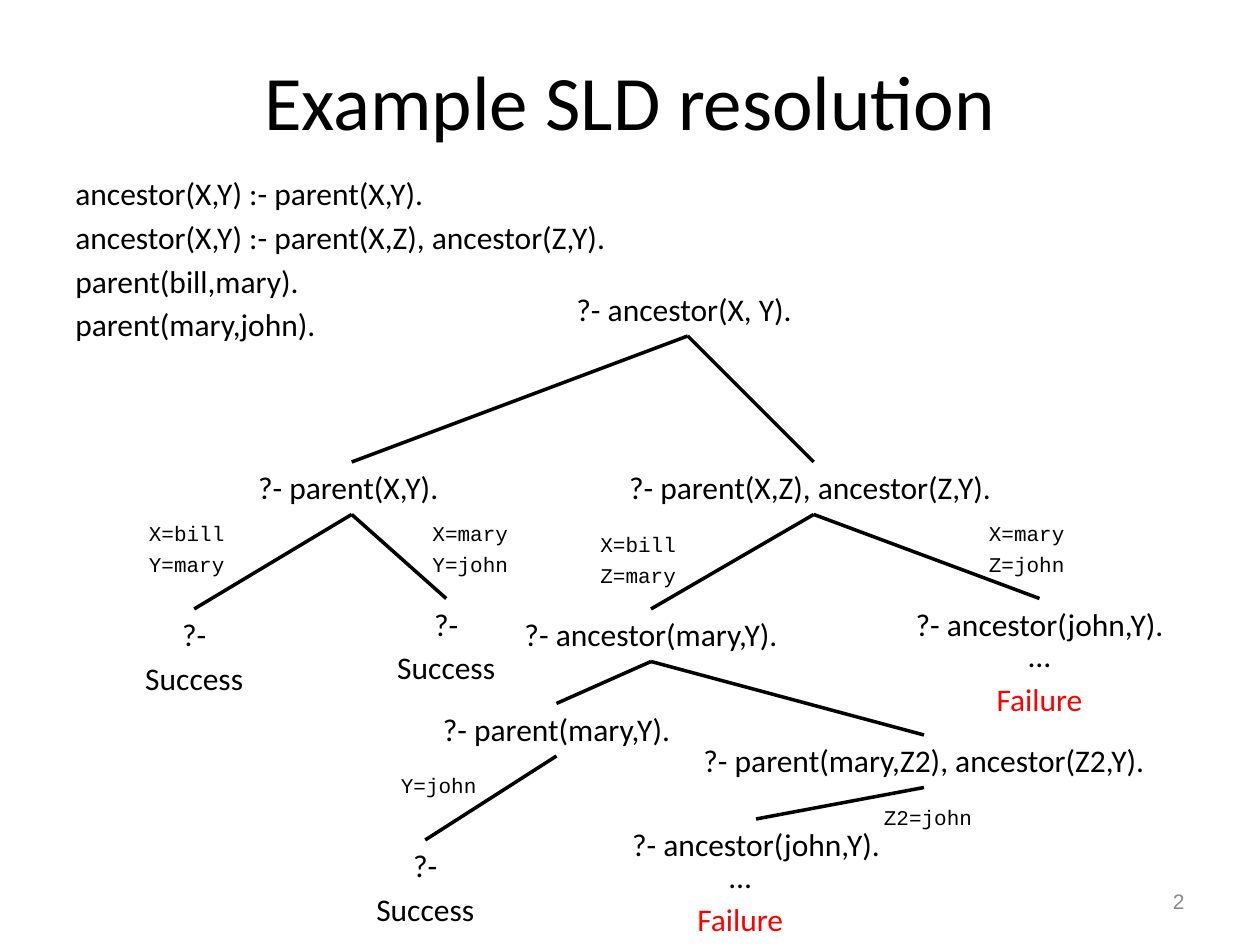
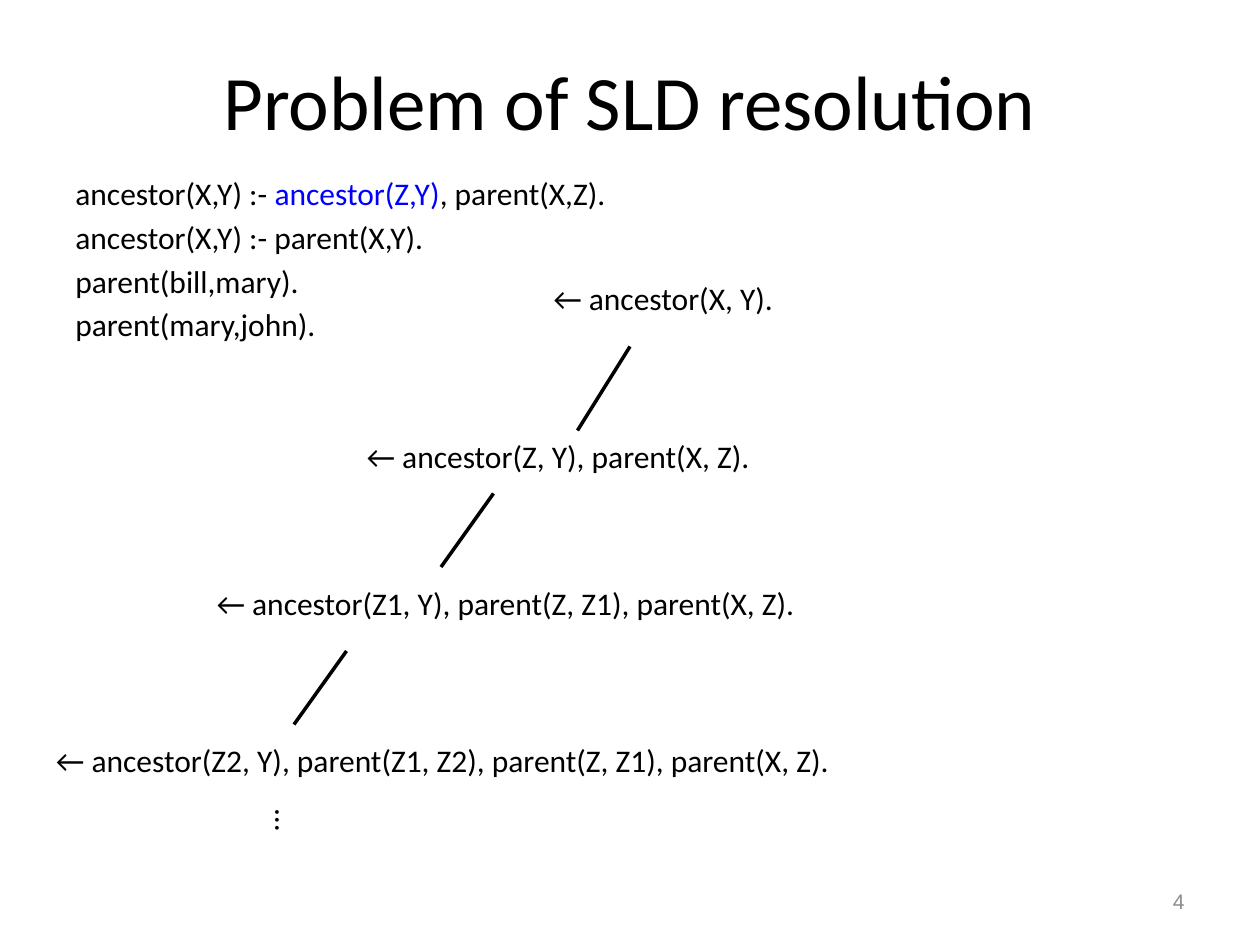
from pptx import Presentation
from pptx.dml.color import RGBColor
from pptx.enum.shapes import MSO_CONNECTOR, MSO_SHAPE
from pptx.enum.text import MSO_ANCHOR, PP_ALIGN
from pptx.oxml.ns import qn
from pptx.util import Pt
from lxml.etree import SubElement

BLACK, WHITE, GRAY, RED, BLUE = "000000", "FFFFFF", "8C8C8C", "FF0000", "0000FF"
BODY, CODE, NUMBER = "Calibri", "Courier New", "Arial"
NODE_H = 30


def rgb(color):
    return RGBColor.from_string(color)


def write(sp, lines, size=18, font=BODY, color=BLACK, align=PP_ALIGN.LEFT,
          anchor=MSO_ANCHOR.TOP, before=3.4):
    """Each line is a string or a list of (text, color) runs."""
    tf = sp.text_frame
    tf.word_wrap = True
    tf.vertical_anchor = anchor
    for i, line in enumerate(lines):
        p = tf.add_paragraph() if i else tf.paragraphs[0]
        p.alignment = align
        p.space_before = Pt(before)
        for text, run_color in [(line, color)] if isinstance(line, str) else line:
            r = p.add_run()
            r.text = text
            r.font.size = Pt(size)
            r.font.name = font
            r.font.color.rgb = rgb(run_color)


class Deck:
    def __init__(self):
        self.prs = Presentation()
        self.prs.slide_width, self.prs.slide_height = Pt(720), Pt(540)
        self.s = None

    def slide(self, title, number, facts):
        self.s = self.prs.slides.add_slide(self.prs.slide_layouts[6])
        self.text([title], 36, 12, 648, 90, size=44, align=PP_ALIGN.CENTER,
                  anchor=MSO_ANCHOR.MIDDLE, before=0)
        self.text(facts, 36, 96, 474, 107)
        self.text([number], 516, 500.4, 168, 28.8, size=12, font=NUMBER, color=GRAY,
                  align=PP_ALIGN.RIGHT, anchor=MSO_ANCHOR.MIDDLE, before=0)

    def text(self, lines, x, y, w, h, **fmt):
        sp = self.s.shapes.add_textbox(Pt(x), Pt(y), Pt(w), Pt(h))
        write(sp, lines, **fmt)
        return sp

    def node(self, lines, cx, y, w, h=NODE_H):
        """Text centred on cx."""
        self.text(lines, cx - w / 2, y, w, h, align=PP_ALIGN.CENTER)

    def binding(self, lines, x, y, w=72, h=48):
        """White box with variable bindings."""
        sp = self.s.shapes.add_shape(MSO_SHAPE.RECTANGLE, Pt(x), Pt(y), Pt(w), Pt(h))
        sp.shadow.inherit = False
        sp.fill.solid()
        sp.fill.fore_color.rgb = rgb(WHITE)
        sp.line.fill.background()
        write(sp, lines, size=12, font=CODE)

    def line(self, x1, y1, x2, y2):
        c = self.s.shapes.add_connector(MSO_CONNECTOR.STRAIGHT, Pt(x1), Pt(y1), Pt(x2), Pt(y2))
        c.line.color.rgb = rgb(BLACK)
        c.line.width = Pt(0)
        SubElement(c._element.spPr, qn("a:effectLst"))


def resolution_tree(deck):
    deck.slide("Example SLD resolution", "2", [
        "ancestor(X,Y) :- parent(X,Y).",
        "ancestor(X,Y) :- parent(X,Z), ancestor(Z,Y).",
        "parent(bill,mary).",
        "parent(mary,john).",
    ])

    # Variable bindings, behind the branches
    deck.binding(["Z2=john"], 498, 456)
    deck.binding(["X=mary", "Y=john"], 240, 294, 90, 54)
    deck.binding(["Y=john"], 222, 438, 66, 30)
    deck.binding(["X=bill", "Y=mary"], 78, 294)
    deck.binding(["X=bill", "Z=mary"], 336, 300)
    deck.binding(["X=mary", "Z=john"], 558, 294)

    # Goals: name -> (parent goal, lines, centre, top, width)
    success = ["?-", "Success"]
    goals = {
        "root": (None, ["?- ancestor(X, Y). "], 393, 162, 258),
        "direct": ("root", ["?- parent(X,Y). "], 201, 264, 162),
        "bill": ("direct", success, 111, 348, 90),
        "mary": ("direct", success, 255, 342, 90),
        "recursive": ("root", ["?- parent(X,Z), ancestor(Z,Y). "], 465, 264, 294),
        "of_mary": ("recursive", ["?- ancestor(mary,Y)."], 372, 348, 204),
        "mary_direct": ("of_mary", ["?- parent(mary,Y)."], 318, 402, 204),
        "mary_john": ("mary_direct", success, 243, 480, 90),
        "mary_recursive": ("of_mary", ["?- parent(mary,Z2), ancestor(Z2,Y)."], 528, 420, 276),
        "of_john_low": ("mary_recursive", ["?- ancestor(john,Y)."], 432, 468, 204),
        "of_john": ("recursive", ["?- ancestor(john,Y)."], 594, 342, 204),
    }
    for parent, lines, cx, top, w in goals.values():
        if parent:
            _, _, parent_cx, parent_top, _ = goals[parent]
            deck.line(parent_cx, parent_top + NODE_H, cx, top)
        deck.node(lines, cx, top, w, NODE_H * len(lines))

    # Failed branches
    for cx, top in [(423, 486), (594, 360)]:
        deck.node(["…", [("Failure", RED)]], cx, top, 96, 60)


def endless_descent(deck):
    deck.slide("Problem of SLD resolution", "4", [
        [("ancestor(X,Y) :- ", BLACK), ("ancestor(Z,Y)", BLUE), (", parent(X,Z).", BLACK)],
        "ancestor(X,Y) :- parent(X,Y).",
        "parent(bill,mary).",
        "parent(mary,john).",
    ])

    # Goals that keep growing
    for goal, cx, top, w in [
        ("← ancestor(X, Y). ", 381, 156, 258),
        ("← ancestor(Z, Y), parent(X, Z). ", 321, 246, 294),
        ("← ancestor(Z1, Y), parent(Z, Z1), parent(X, Z). ", 291, 330, 402),
        ("← ancestor(Z2, Y), parent(Z1, Z2), parent(Z, Z1), parent(X, Z). ", 255, 420, 474),
    ]:
        deck.node([goal], cx, top, w)

    # Steps between goals
    for x, top, bottom in [(360, 198, 246), (282, 282, 324), (198, 372, 414)]:
        deck.line(x, top, x - 30, bottom)

    # Continuation dots
    dots = deck.text(["…"], 140.4, 465, 48, 29, before=0)
    dots.rotation = 90


def main():
    deck = Deck()
    resolution_tree(deck)
    endless_descent(deck)
    deck.prs.save("out.pptx")


if __name__ == "__main__":
    main()
